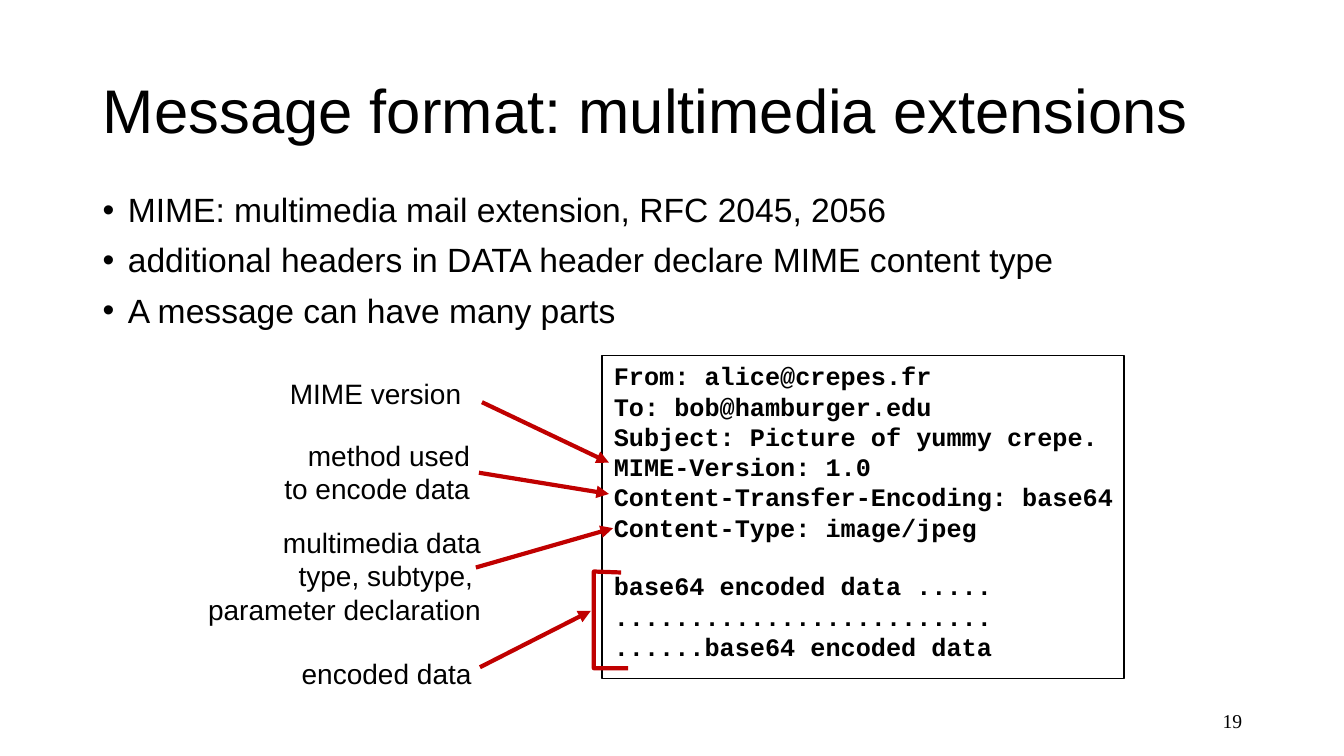
from lxml.etree import SubElement
from pptx import Presentation
from pptx.dml.color import RGBColor
from pptx.enum.shapes import MSO_CONNECTOR, MSO_SHAPE
from pptx.enum.text import MSO_ANCHOR, PP_ALIGN
from pptx.oxml.ns import qn
from pptx.util import Pt

PX = 9144  # 100 px to the inch
BLACK = RGBColor(0x00, 0x00, 0x00)
RED = RGBColor(0xC0, 0x00, 0x00)

BULLETS = [
    "MIME: multimedia mail extension, RFC 2045, 2056",
    "additional headers in DATA header declare MIME content type",
    "A message can have many parts",
]
HEADERS = [
    "From: alice@crepes.fr",
    "To: bob@hamburger.edu",
    "Subject: Picture of yummy crepe.",
    "MIME-Version: 1.0",
    "Content-Transfer-Encoding: base64",
    "Content-Type: image/jpeg",
]
DATA = [
    "base64 encoded data .....",
    ".........................",
    "......base64 encoded data",
]
# lines, box, alignment, arrow start, arrow end
LABELS = [
    (["MIME version"], (277, 369, 191, 44), PP_ALIGN.CENTER, (478, 399), (604, 459)),
    (["method used", "to encode data"], (264, 430, 212, 77), PP_ALIGN.RIGHT,
     (475, 469), (604, 490)),
    (["multimedia data", "type, subtype, ", "parameter declaration"],
     (194, 516, 293, 111), PP_ALIGN.RIGHT, (472, 563), (608, 524)),
    (["encoded data"], (286, 646, 195, 44), PP_ALIGN.CENTER, (476, 662), (586, 606)),
]
BRACKET = [(616, 568), (589, 567), (589, 663), (623, 663)]


def px(*lengths):
    return [n * PX for n in lengths]


def style_text(tf, size, font="Arial", bold=False, align=PP_ALIGN.LEFT):
    for p in tf.paragraphs:
        p.alignment = align
        for r in p.runs:
            r.font.name = font
            r.font.size = Pt(size)
            r.font.bold = bold
            r.font.color.rgb = BLACK


def add_text(s, lines, box, size, wrap=True, **style):
    tf = s.shapes.add_textbox(*px(*box)).text_frame
    tf.word_wrap = wrap
    tf.text = "\n".join(lines)
    style_text(tf, size, **style)
    return tf


def set_title(s, text):
    title = s.shapes.title
    title.left, title.top, title.width, title.height = px(92, 40, 1150, 145)
    tf = title.text_frame
    tf.text = text
    tf.vertical_anchor = MSO_ANCHOR.MIDDLE
    tf.paragraphs[0].line_spacing = 0.9
    style_text(tf, 44)


def add_bullets(s, lines, box):
    for p in add_text(s, lines, box, 24).paragraphs:
        p.line_spacing = 0.9
        p.space_before = Pt(10)
        pPr = p._p.get_or_add_pPr()
        pPr.set("marL", str(25 * PX))
        pPr.set("indent", str(-25 * PX))
        SubElement(pPr, qn("a:buFont"), typeface="Arial")
        SubElement(pPr, qn("a:buChar"), char="•")


def add_message(s):
    """The framed mail message, with a one-line gap between headers and data."""
    tf = add_text(s, HEADERS + DATA, (599, 353, 544, 340), 18,
                  font="Courier New", bold=True)
    tf.paragraphs[len(HEADERS)].space_before = Pt(20.4)
    frame = s.shapes.add_shape(MSO_SHAPE.RECTANGLE, *px(597, 353, 518, 320))
    frame.shadow.inherit = False
    frame.fill.background()
    frame.line.color.rgb = BLACK
    frame.line.width = Pt(1)


def red_line(line):
    line.color.rgb = RED
    line.width = Pt(3)


def add_arrow(s, start, end):
    arrow = s.shapes.add_connector(MSO_CONNECTOR.STRAIGHT, *px(*start, *end))
    red_line(arrow.line)
    SubElement(arrow.line._get_or_add_ln(), qn("a:tailEnd"), type="triangle")
    SubElement(arrow._element.spPr, qn("a:effectLst"))


def add_bracket(s, points):
    builder = s.shapes.build_freeform(*points[0], scale=PX)
    builder.add_line_segments(points[1:], close=False)
    bracket = builder.convert_to_shape()
    bracket.shadow.inherit = False
    bracket.fill.background()
    red_line(bracket.line)


def main():
    prs = Presentation()
    prs.slide_width, prs.slide_height = px(1333, 750)
    s = prs.slides.add_slide(prs.slide_layouts[5])
    set_title(s, "Message format: multimedia extensions")
    add_bullets(s, BULLETS, (92, 187, 1083, 160))
    add_message(s)
    for lines, box, align, start, end in LABELS:
        add_text(s, lines, box, 20, wrap=False, align=align)
        add_arrow(s, start, end)
    add_bracket(s, BRACKET)
    number = add_text(s, ["19"], (942, 695, 300, 40), 14,
                      font="Times New Roman", align=PP_ALIGN.RIGHT)
    number.vertical_anchor = MSO_ANCHOR.MIDDLE
    prs.save("out.pptx")


if __name__ == "__main__":
    main()
